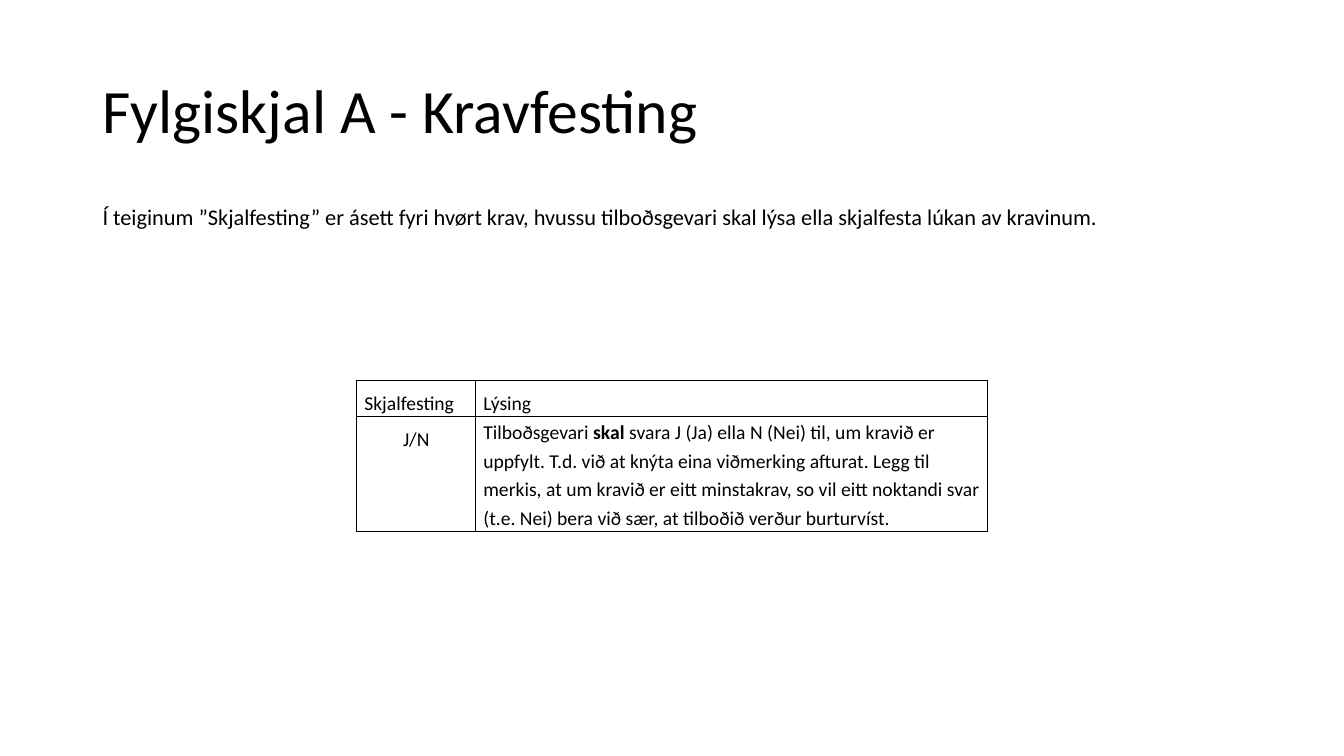
import pptx
import pptx.util
import pptx.dml.color
import pptx.enum.text
import pptx.oxml
import pptx.oxml.ns
import lxml.etree
from pptx.util import Cm

COLORS = {"text": "000000", "border": "000000"}
FONT = "Calibri"
ALIGN = pptx.enum.text.PP_ALIGN
ANCHOR = pptx.enum.text.MSO_ANCHOR


def style_paragraph(paragraph, size, spacing, alignment=ALIGN.LEFT):
    paragraph.alignment = alignment
    paragraph.line_spacing = spacing
    for run in paragraph.runs:
        run.font.size = pptx.util.Pt(size)
        run.font.name = FONT
        run.font.color.rgb = pptx.dml.color.RGBColor.from_string(COLORS["text"])


def add_borders(cell):
    properties = cell._tc.get_or_add_tcPr()
    for position, side in enumerate(("lnL", "lnR", "lnT", "lnB")):
        line = lxml.etree.Element(pptx.oxml.ns.qn(f"a:{side}"), w=str(pptx.util.Pt(1)))
        fill = lxml.etree.SubElement(line, pptx.oxml.ns.qn("a:solidFill"))
        lxml.etree.SubElement(fill, pptx.oxml.ns.qn("a:srgbClr"), val=COLORS["border"])
        properties.insert(position, line)


presentation = pptx.Presentation()
presentation.slide_width = Cm(33.87)
presentation.slide_height = Cm(19.05)
slide = presentation.slides.add_slide(presentation.slide_layouts[1])

heading = slide.shapes.title
heading.left, heading.top, heading.width, heading.height = Cm(2.33), Cm(1.01), Cm(29.21), Cm(3.68)
heading.text_frame.text = "Fylgiskjal A - Kravfesting"
heading.text_frame.vertical_anchor = ANCHOR.MIDDLE
style_paragraph(heading.text_frame.paragraphs[0], 44, 0.9)

intro = slide.placeholders[1]
intro.left, intro.top, intro.width, intro.height = Cm(2.33), Cm(5.07), Cm(29.21), Cm(12.09)
intro.text_frame.text = (
    "Í teiginum ”Skjalfesting” er ásett fyri hvørt krav, hvussu tilboðsgevari "
    "skal lýsa ella skjalfesta lúkan av kravinum."
)
intro_paragraph = intro.text_frame.paragraphs[0]
style_paragraph(intro_paragraph, 16, 0.9)
intro_paragraph.space_before = pptx.util.Pt(10)
intro_properties = intro_paragraph._p.get_or_add_pPr()
intro_properties.set("marL", "0")
intro_properties.set("indent", "0")
lxml.etree.SubElement(intro_properties, pptx.oxml.ns.qn("a:buNone"))

requirement_rows = [
    [("Skjalfesting", 1.5, ALIGN.LEFT), ("Lýsing", 1.5, ALIGN.LEFT)],
    [
        ("J/N", 1.5, ALIGN.CENTER),
        (
            "Tilboðsgevari *skal* svara J (Ja) ella N (Nei) til, um kravið er uppfylt. "
            "T.d. við at knýta eina viðmerking afturat. Legg til merkis, at um kravið er "
            "eitt minstakrav, so vil eitt noktandi svar (t.e. Nei) bera við sær, at "
            "tilboðið verður burturvíst.",
            1.2,
            ALIGN.LEFT,
        ),
    ],
]
requirements = slide.shapes.add_table(2, 2, Cm(8.99), Cm(9.58), Cm(15.9), Cm(3.81)).table
requirements.first_row = False
requirements.horz_banding = False
for column, width in zip(requirements.columns, (3, 12.9)):
    column.width = Cm(width)
for row, height in zip(requirements.rows, (0.91, 2.9)):
    row.height = Cm(height)

for row, entries in zip(requirements.rows, requirement_rows):
    for cell, (wording, spacing, alignment) in zip(row.cells, entries):
        cell.fill.background()
        cell.margin_left = cell.margin_right = Cm(0.19)
        cell.margin_top = cell.margin_bottom = Cm(0)
        cell.vertical_anchor = ANCHOR.TOP
        paragraph = cell.text_frame.paragraphs[0]
        for index, part in enumerate(wording.split("*")):
            run = paragraph.add_run()
            run.text = part
            run.font.bold = index % 2 == 1
        style_paragraph(paragraph, 14, spacing, alignment)
        add_borders(cell)

presentation.save("out.pptx")
